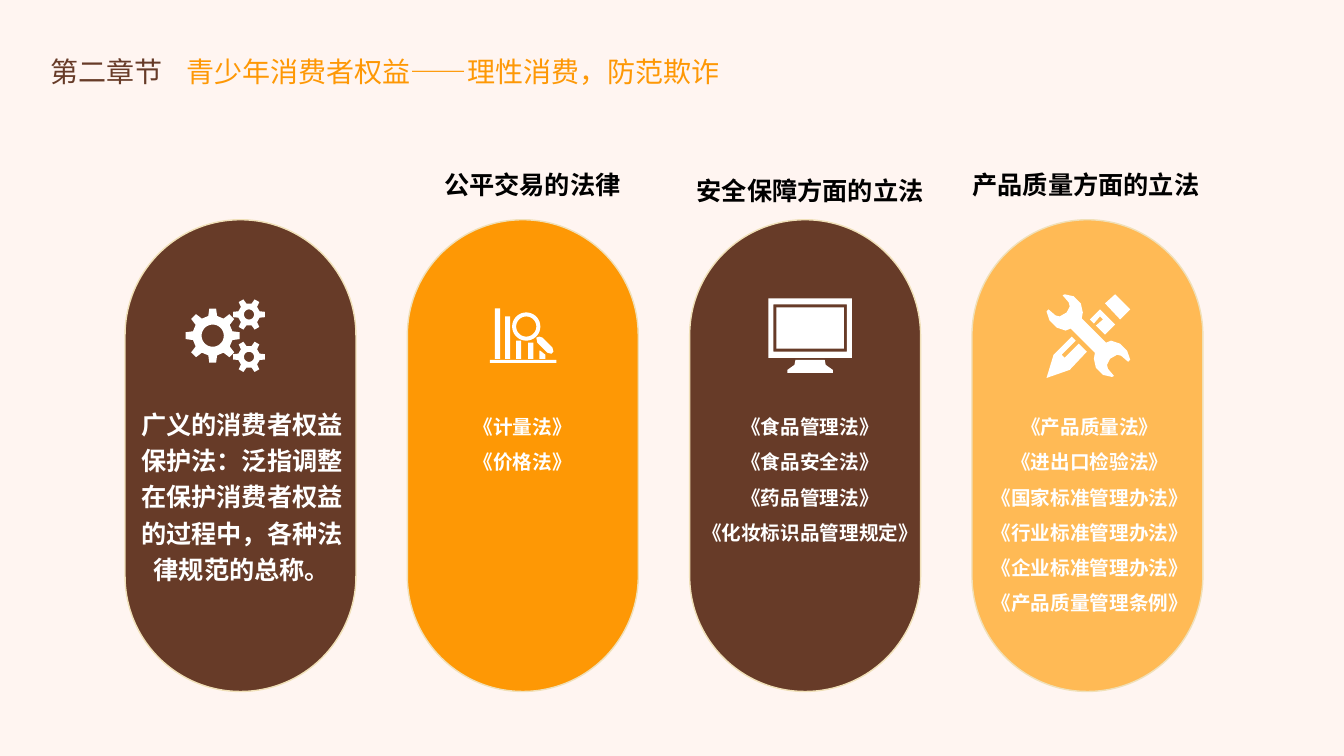
from math import cos, pi, sin

from lxml import etree
from pptx import Presentation
from pptx.dml.color import RGBColor
from pptx.enum.shapes import MSO_SHAPE
from pptx.enum.text import MSO_ANCHOR, MSO_AUTO_SIZE, PP_ALIGN
from pptx.oxml.ns import qn
from pptx.util import Inches, Pt

ROUNDED = MSO_SHAPE.ROUNDED_RECTANGLE
TOP = MSO_ANCHOR.TOP
NO_AUTOFIT = MSO_AUTO_SIZE.NONE
LEFT, CENTER = PP_ALIGN.LEFT, PP_ALIGN.CENTER

FONT = "Noto Sans CJK SC"
BROWN, ORANGE, AMBER = "673B28", "FE9805", "FFBA55"
CREAM, PINK, WHITE, BLACK = "F0E0B8", "FFF5F1", "FFFFFF", "000000"
COMPARISON_LAYOUT = 4

PILL_LEFT, PILL_TOP, PILL_WIDTH, PILL_HEIGHT = 1.24, 2.18, 2.29, 4.68
PILL_PITCH = 2.8
TEXT_TOP = 1.77


def paint(color_format, color):
    color_format.rgb = RGBColor.from_string(color)


def fill_solid(fill, color):
    fill.solid()
    paint(fill.fore_color, color)


def write_text(shape, box, text, size=14, color=WHITE, bold=False,
               align=CENTER, spacing=1.0):
    """Place a text shape and fill it, one paragraph for each line of text."""
    shape.left, shape.top, shape.width, shape.height = map(Inches, box)
    frame = shape.text_frame
    frame.auto_size = NO_AUTOFIT
    frame.word_wrap = True
    frame.vertical_anchor = TOP
    frame.text = text
    for paragraph in frame.paragraphs:
        properties = paragraph._p.get_or_add_pPr()
        properties.set("marL", "0")
        properties.set("indent", "0")
        etree.SubElement(properties, qn("a:buNone"))
        paragraph.alignment = align
        paragraph.line_spacing = spacing
        paragraph.space_before = Pt(0)
        font = paragraph.runs[0].font
        font.size, font.bold = Pt(size), bold
        paint(font.fill_color if hasattr(font, "fill_color") else font.color, color)
        font.name = FONT
        east_asian = etree.SubElement(paragraph.runs[0]._r.get_or_add_rPr(), qn("a:ea"))
        east_asian.set("typeface", FONT)


def add_text(slide, box, text, **text_format):
    write_text(slide.shapes.add_textbox(*map(Inches, box)), box, text, **text_format)


def fill_placeholder(slide, index, box, text, **text_format):
    """Fill a placeholder and bring it in front of the shapes drawn so far."""
    shape = slide.placeholders[index]
    write_text(shape, box, text, **text_format)
    shape.element.getparent().append(shape.element)


def rectangle(left, top, width, height):
    right, bottom = left + width, top + height
    return [(left, top), (right, top), (right, bottom), (left, bottom)]


def polar(center, radius, angle):
    return center[0] + radius * cos(angle), center[1] + radius * sin(angle)


def circle(center, radius, steps=36):
    return [polar(center, radius, 2 * pi * step / steps) for step in range(steps)]


def gear(center, outer, root, hole, teeth):
    tooth = [(-0.28, root), (-0.16, outer), (0.16, outer), (0.28, root)]
    rim = [polar(center, radius, 2 * pi * (number + shift) / teeth)
           for number in range(teeth) for shift, radius in tooth]
    return [rim, circle(center, hole)]


def gears_icon():
    return (gear((0.27, 0.36), 0.27, 0.2, 0.11, 8)
            + gear((0.63, 0.15), 0.16, 0.11, 0.05, 6)
            + gear((0.63, 0.57), 0.16, 0.11, 0.05, 6))


def chart_icon():
    base = rectangle(0, 0.51, 0.66, 0.03)
    bars = [rectangle(left, top, 0.05, 0.5 - top)
            for left, top in [(0.05, 0), (0.15, 0.08), (0.26, 0.32), (0.38, 0.34)]]
    last_bar = [(0.49, 0.42), (0.5, 0.42), (0.55, 0.46), (0.55, 0.5), (0.49, 0.5)]
    lens = [circle((0.36, 0.18), radius) for radius in (0.14, 0.1)]
    handle = [(0.46, 0.29), (0.49, 0.28), (0.52, 0.29), (0.62, 0.39),
              (0.63, 0.43), (0.61, 0.45), (0.57, 0.44), (0.47, 0.34)]
    return [base, *bars, last_bar, *lens, handle]


def monitor_icon():
    stand = [(0.27, 0.61), (0.56, 0.61), (0.57, 0.66), (0.64, 0.71),
             (0.64, 0.74), (0.19, 0.74), (0.19, 0.71), (0.26, 0.66)]
    return [rectangle(0, 0, 0.83, 0.59), rectangle(0.05, 0.06, 0.73, 0.47),
            rectangle(0.08, 0.09, 0.67, 0.41), stand]


def tools_icon():
    jaw = [(0.35, 0.24), (0.36, 0.18), (0.34, 0.09), (0.27, 0.02), (0.18, 0),
           (0.16, 0.01), (0.22, 0.08), (0.23, 0.12), (0.2, 0.18), (0.13, 0.22),
           (0.09, 0.21), (0.02, 0.15), (0, 0.17), (0.03, 0.26), (0.1, 0.33),
           (0.19, 0.36), (0.24, 0.34)]
    wrench = jaw + [(0.83 - x, 0.82 - y) for x, y in jaw]
    pencil = [(0.32, 0.49), (0.18, 0.63), (0.15, 0.6), (0.29, 0.46), (0.25, 0.42),
              (0.07, 0.6), (0, 0.83), (0.23, 0.75), (0.4, 0.57)]
    shaft = [(0.47, 0.29), (0.53, 0.22), (0.56, 0.25), (0.49, 0.31),
             (0.58, 0.4), (0.68, 0.3), (0.53, 0.15), (0.43, 0.25)]
    end = [(0.58, 0.09), (0.68, 0), (0.83, 0.15), (0.73, 0.25)]
    return [wrench, pencil, shaft, end]


def add_icon(slide, left, top, outlines):
    """Draw all outlines as one white shape; inner outlines become holes."""
    builder = None
    for outline in outlines:
        points = [(Inches(left + x), Inches(top + y)) for x, y in outline]
        if builder is None:
            builder = slide.shapes.build_freeform(*points[0])
        else:
            builder.move_to(*points[0])
        builder.add_line_segments(points[1:], close=True)
    shape = builder.convert_to_shape()
    shape.shadow.inherit = False
    fill_solid(shape.fill, WHITE)
    shape.line.fill.background()


def add_pill(slide, left, top, color):
    shape = slide.shapes.add_shape(
        ROUNDED, *map(Inches, (left, top, PILL_WIDTH, PILL_HEIGHT)))
    shape.adjustments[0] = 0.5
    shape.shadow.inherit = False
    fill_solid(shape.fill, color)
    paint(shape.line.color, CREAM)
    shape.line.width = Pt(1)


def add_column(slide, left, top, column):
    add_pill(slide, left, top, column["color"])
    icon_x, icon_y = column["icon_at"]
    add_icon(slide, left + icon_x, top + icon_y, column["icon"]())
    if "heading" in column:
        x, y, width = column["heading_box"]
        add_text(slide, (left + x, top + y, width, 0.43), column["heading"],
                 size=18, color=BLACK, bold=True, spacing=1.2)
    x, width, height = column["text_box"]
    fill_placeholder(slide, column["placeholder"],
                     (left + x, top + TEXT_TOP, width, height), column["text"],
                     bold=True, **column.get("format", {"spacing": 1.5}))


def add_title(slide, left, top):
    add_text(slide, (left, top, 1.37, 0.44), "第二章节", size=20, color=BROWN, align=LEFT)
    fill_placeholder(slide, 0, (left + 1.35, top, 7, 0.44),
                     "青少年消费者权益——理性消费，防范欺诈",
                     size=20, color=ORANGE, align=LEFT)


COLUMNS = [
    {"color": BROWN, "icon": gears_icon, "icon_at": (0.6, 0.79), "placeholder": 1,
     "text_box": (0.04, 2.24, 1.92), "format": {"size": 18, "spacing": 1.2},
     "text": "广义的消费者权益保护法：泛指调整在保护消费者权益的过程中，各种法律规范的总称。"},
    {"color": ORANGE, "icon": chart_icon, "icon_at": (0.82, 0.88), "placeholder": 2,
     "heading": "公平交易的法律", "heading_box": (-0.21, -0.61, 2.9),
     "text_box": (0.18, 1.93, 0.81), "text": "《计量法》\n《价格法》"},
    {"color": BROWN, "icon": monitor_icon, "icon_at": (0.78, 0.78), "placeholder": 3,
     "heading": "安全保障方面的立法", "heading_box": (-0.04, -0.55, 2.47),
     "text_box": (-0.09, 2.57, 1.51),
     "text": "《食品管理法》\n《食品安全法》\n《药品管理法》\n《化妆标识品管理规定》"},
    {"color": AMBER, "icon": tools_icon, "icon_at": (0.74, 0.74), "placeholder": 4,
     "heading": "产品质量方面的立法", "heading_box": (-0.32, -0.61, 2.9),
     "text_box": (-0.12, 2.58, 2.22),
     "text": "《产品质量法》\n《进出口检验法》\n《国家标准管理办法》\n"
             "《行业标准管理办法》\n《企业标准管理办法》\n《产品质量管理条例》"},
]


def main():
    presentation = Presentation()
    presentation.slide_width, presentation.slide_height = Inches(13.33), Inches(7.5)
    slide = presentation.slides.add_slide(presentation.slide_layouts[COMPARISON_LAYOUT])
    fill_solid(slide.background.fill, PINK)
    add_title(slide, 0.4, 0.49)
    for number, column in enumerate(COLUMNS):
        add_column(slide, PILL_LEFT + number * PILL_PITCH, PILL_TOP, column)
    presentation.save("out.pptx")


if __name__ == "__main__":
    main()
